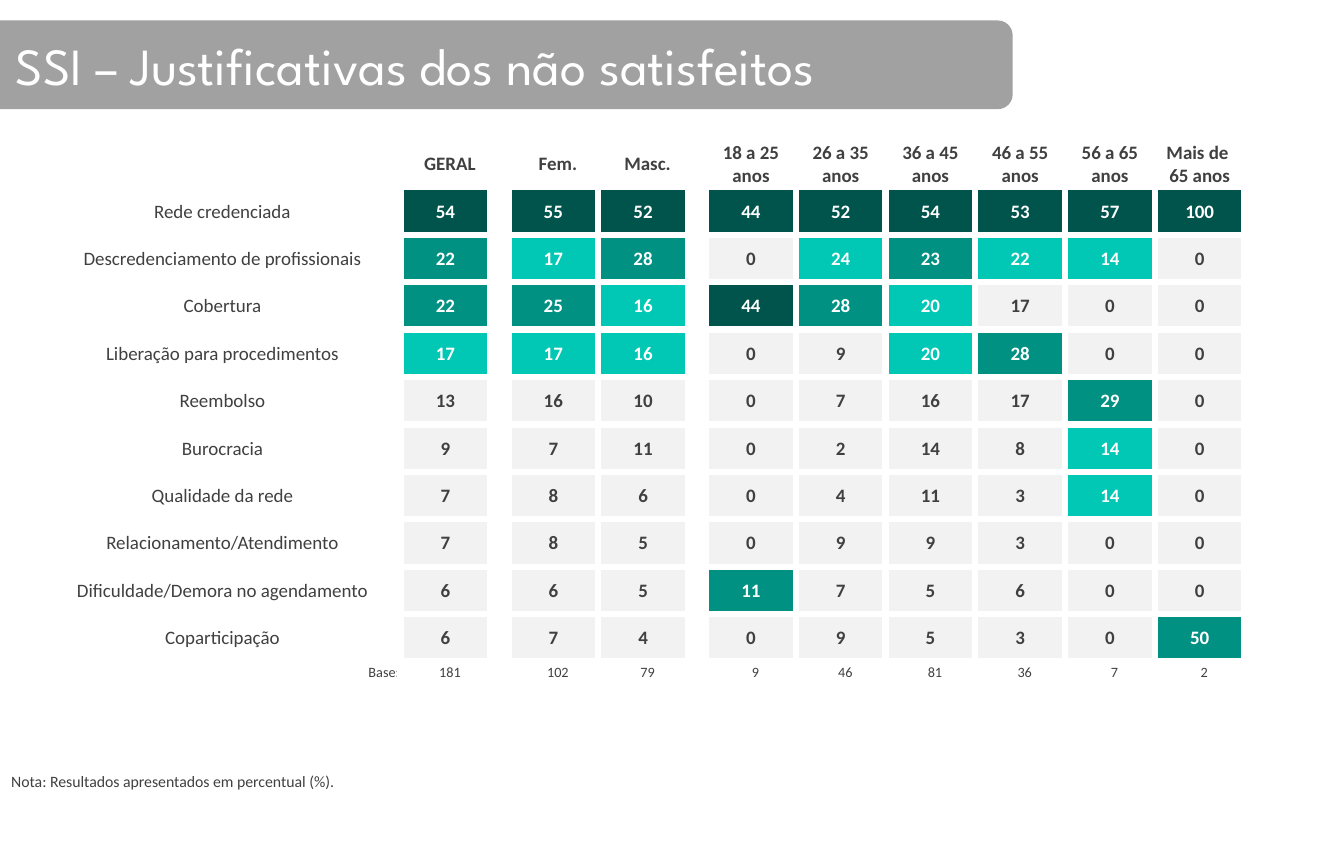
from lxml.etree import SubElement
from pptx import Presentation
from pptx.dml.color import RGBColor
from pptx.enum.shapes import MSO_SHAPE
from pptx.enum.text import MSO_ANCHOR, MSO_AUTO_SIZE, PP_ALIGN
from pptx.oxml.ns import qn
from pptx.util import Inches, Pt

WHITE = RGBColor(0xFF, 0xFF, 0xFF)
DARK = RGBColor(0x40, 0x40, 0x40)
BANNER = RGBColor(0xA1, 0xA1, 0xA1)
PALE = RGBColor(0xF2, 0xF2, 0xF2)
RANK_COLORS = [RGBColor(0x00, 0x54, 0x4C), RGBColor(0x00, 0x91, 0x83), RGBColor(0x00, 0xC8, 0xB5)]

HEADERS = ["GERAL", "Fem.", "Masc.", "18 a 25\nanos", "26 a 35\nanos", "36 a 45\nanos",
           "46 a 55\nanos", "56 a 65\nanos", "Mais de \n65 anos"]
REASONS = [
    ("Rede credenciada", [54, 55, 52, 44, 52, 54, 53, 57, 100]),
    ("Descredenciamento de profissionais", [22, 17, 28, 0, 24, 23, 22, 14, 0]),
    ("Cobertura", [22, 25, 16, 44, 28, 20, 17, 0, 0]),
    ("Liberação para procedimentos", [17, 17, 16, 0, 9, 20, 28, 0, 0]),
    ("Reembolso", [13, 16, 10, 0, 7, 16, 17, 29, 0]),
    ("Burocracia", [9, 7, 11, 0, 2, 14, 8, 14, 0]),
    ("Qualidade da rede", [7, 8, 6, 0, 4, 11, 3, 14, 0]),
    ("Relacionamento/Atendimento", [7, 8, 5, 0, 9, 9, 3, 0, 0]),
    ("Dificuldade/Demora no agendamento", [6, 6, 5, 11, 7, 5, 6, 0, 0]),
    ("Coparticipação", [6, 7, 4, 0, 9, 5, 3, 0, 50]),
]
BASES = [181, 102, 79, 9, 46, 81, 36, 7, 2]
VALUE_COLUMNS = [1, 3, 4, 6, 7, 8, 9, 10, 11]
GAP_COLUMNS = [2, 5]
BASE_ROW = len(REASONS) + 1


def write_cell(cell, text, size, bold=False, color=DARK, fill=None, left=0.01, align=PP_ALIGN.CENTER):
    cell.text = text
    cell.vertical_anchor = MSO_ANCHOR.MIDDLE
    cell.margin_left = Inches(left)
    cell.margin_right = cell.margin_top = Inches(0.01)
    cell.margin_bottom = 0
    for para in cell.text_frame.paragraphs:
        para.alignment = align
        para.font.name = "Calibri"
        para.font.size = Pt(size)
        para.font.bold = bold
        para.font.color.rgb = color
    if fill is not None:
        cell.fill.solid()
        cell.fill.fore_color.rgb = fill


deck = Presentation()
deck.slide_width = Inches(11.811)
deck.slide_height = Inches(7.5)
page = deck.slides.add_slide(deck.slide_layouts[5])

title = page.shapes.title
title.left, title.top, title.width, title.height = Inches(0), Inches(0.18), Inches(8.9), Inches(0.78)
title.text_frame.text = "SSI – Justificativas dos não satisfeitos"
title.text_frame.word_wrap = True
title.text_frame.auto_size = MSO_AUTO_SIZE.NONE
title.text_frame.vertical_anchor = MSO_ANCHOR.MIDDLE
title.text_frame.margin_left = Inches(0.14)
heading = title.text_frame.paragraphs[0]
heading.alignment = PP_ALIGN.LEFT
heading.font.name = "League Spartan"
heading.font.size = Pt(33)
heading.font.color.rgb = WHITE

banner = page.shapes.add_shape(MSO_SHAPE.ROUNDED_RECTANGLE, Inches(-0.24), Inches(0.18), Inches(9.14), Inches(0.78))
banner.shadow.inherit = False
banner.fill.solid()
banner.fill.fore_color.rgb = BANNER
banner.line.fill.background()
title._element.addprevious(banner._element)

table = page.shapes.add_table(BASE_ROW + 1, 12, Inches(0.39), Inches(1.23), Inches(10.54), Inches(4.77)).table
table.first_row = False
table.horz_banding = False
for column in table.columns:
    column.width = Inches(7.1 / 9)
table.columns[0].width = Inches(3.13)
for index in GAP_COLUMNS:
    table.columns[index].width = Inches(0.16)
for row in table.rows:
    row.height = Inches(4.59 / BASE_ROW)
table.rows[BASE_ROW].height = Inches(0.18)

for cell in table.iter_cells():
    properties = cell._tc.get_or_add_tcPr()
    for side in ("a:lnL", "a:lnR", "a:lnT", "a:lnB"):
        border = SubElement(properties, qn(side), w=str(Pt(4.5)))
        SubElement(SubElement(border, qn("a:solidFill")), qn("a:srgbClr"), val=str(WHITE))
    cell.fill.background()

empty_cells = [table.cell(0, 0)] + [table.cell(row, gap) for row in range(BASE_ROW + 1) for gap in GAP_COLUMNS]
for cell in empty_cells:
    write_cell(cell, "", 9)
    cell.text_frame.paragraphs[0]._p.get_or_add_endParaRPr().set("sz", "900")

for row, (reason, _) in enumerate(REASONS, 1):
    write_cell(table.cell(row, 0), reason, 12)
write_cell(table.cell(BASE_ROW, 0), "Base:", 9, left=0.09, align=PP_ALIGN.RIGHT)

for group, column in enumerate(VALUE_COLUMNS):
    write_cell(table.cell(0, column), HEADERS[group], 12, bold=True, left=0.09 if group < 3 else 0.01)
    write_cell(table.cell(BASE_ROW, column), str(BASES[group]), 9, left=0.09)
    values = [shares[group] for _, shares in REASONS]
    ranking = sorted(set(values) - {0}, reverse=True)
    rank_fills = dict(zip(ranking, RANK_COLORS))
    for row, value in enumerate(values, 1):
        color = WHITE if value in rank_fills else DARK
        write_cell(table.cell(row, column), str(value), 12, True, color, rank_fills.get(value, PALE))

note = page.shapes.add_textbox(Inches(0), Inches(6.74), Inches(3.09), Inches(0.27))
note.text_frame.text = "Nota: Resultados apresentados em percentual (%)."
note.text_frame.word_wrap = False
note.text_frame.auto_size = MSO_AUTO_SIZE.SHAPE_TO_FIT_TEXT
note_para = note.text_frame.paragraphs[0]
note_para.font.name = "Calibri"
note_para.font.size = Pt(10)
note_para.font.color.rgb = DARK

deck.save("out.pptx")
